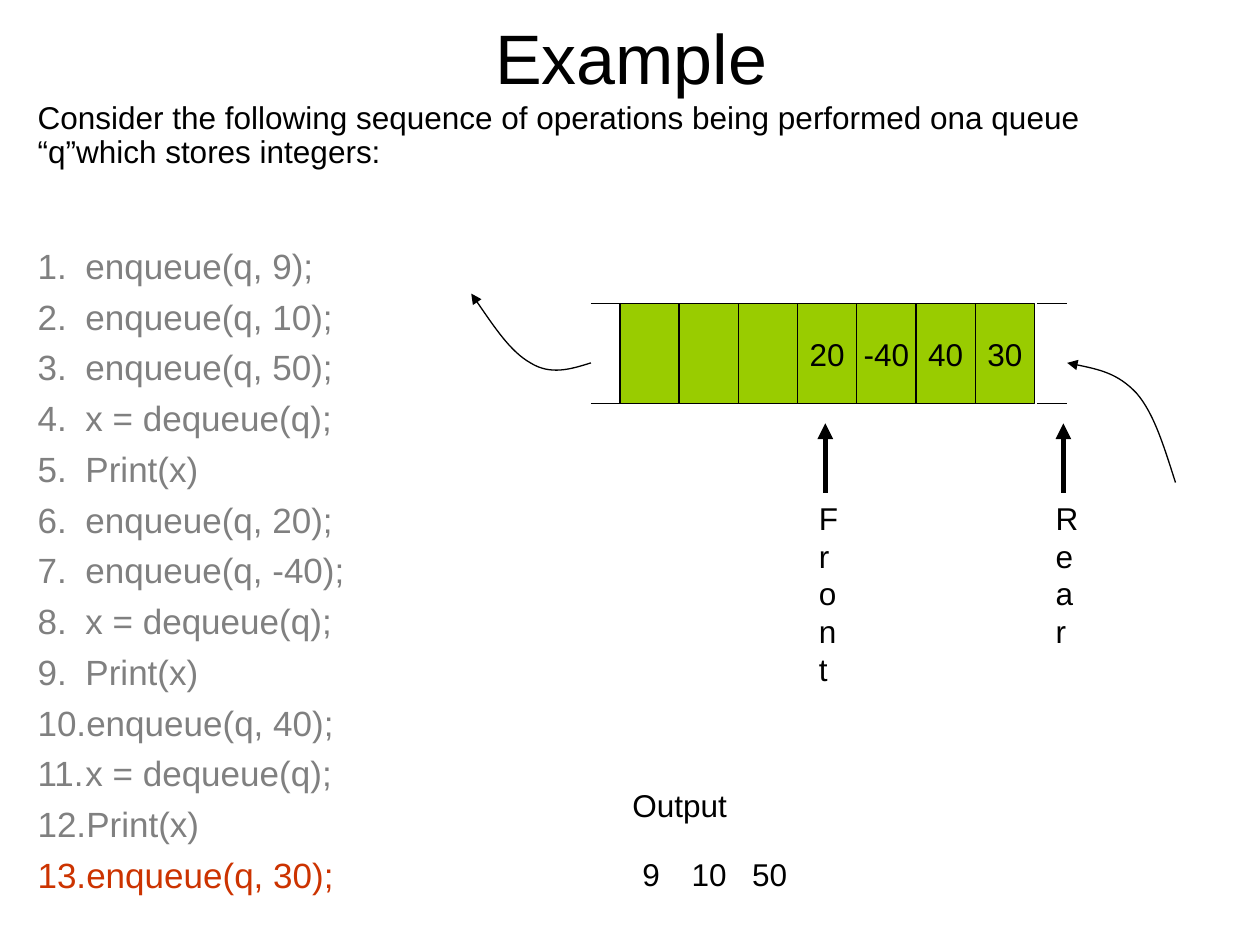
from lxml.etree import SubElement
from pptx import Presentation
from pptx.dml.color import RGBColor
from pptx.enum.shapes import MSO_CONNECTOR, MSO_SHAPE
from pptx.enum.text import MSO_ANCHOR, MSO_AUTO_SIZE, PP_ALIGN
from pptx.oxml.ns import qn
from pptx.util import Inches, Pt

COLORS = {"ink": "000000", "done": "808080", "current": "CC3300", "cell": "99CC00"}


def write(paragraph, text, size=18, color="ink"):
    run = paragraph.add_run()
    run.text = text
    run.font.name = "Arial"
    run.font.size = Pt(size)
    run.font.color.rgb = RGBColor.from_string(COLORS[color])


def draw_line(shape, width=0.75, arrow=False):
    shape.line.color.rgb = RGBColor.from_string(COLORS["ink"])
    shape.line.width = Pt(width)
    if arrow:
        SubElement(shape.line._get_or_add_ln(), qn("a:tailEnd"), type="triangle")
    if shape._element.spPr.find(qn("a:effectLst")) is None:
        SubElement(shape._element.spPr, qn("a:effectLst"))


prs = Presentation()
prs.slide_width, prs.slide_height = Inches(10), Inches(7.5)
slide = prs.slides.add_slide(prs.slide_layouts[5])
shapes = slide.shapes

title = shapes.title
title.left, title.top, title.width, title.height = map(Inches, (0.51, 0.13, 9, 0.63))
title.text_frame.vertical_anchor = MSO_ANCHOR.MIDDLE
title.text_frame.paragraphs[0].alignment = PP_ALIGN.CENTER
write(title.text_frame.paragraphs[0], "Example", 40)

operations = [
    "enqueue(q, 9);", "enqueue(q, 10);", "enqueue(q, 50);", "x = dequeue(q);",
    "Print(x)", "enqueue(q, 20);", "enqueue(q, -40);", "x = dequeue(q);",
    "Print(x)", "enqueue(q, 40);", "x = dequeue(q);", "Print(x)", "enqueue(q, 30);",
]
steps = shapes.add_textbox(Inches(0.2), Inches(1.47), Inches(2.76), Inches(5.75)).text_frame
steps.word_wrap = True
steps.margin_top = Inches(0.47)
for i, operation in enumerate(operations):
    step = steps.add_paragraph() if i else steps.paragraphs[0]
    step.space_before = Pt(5 if i else 0)
    numbering = step._p.get_or_add_pPr()
    numbering.set("marL", str(Inches(0.38)))
    numbering.set("indent", str(-Inches(0.38)))
    SubElement(numbering, qn("a:buFont"), typeface="Arial")
    SubElement(numbering, qn("a:buAutoNum"), type="arabicPeriod")
    write(step, operation, 20, "current" if i == len(operations) - 1 else "done")

labels = [
    ("Consider the following sequence of operations being performed ona queue "
     "“q”which stores integers:", 0.2, 0.76, 9.21, 0.94, True),
    ("Front", 6.4, 3.91, 0.26, 1.6, True),
    ("Rear", 8.28, 3.91, 0.26, 1.3, True),
    ("Output", 4.92, 6.19, 4.72, 0.85, True),
    ("9", 5, 6.74, 0.34, 0.4, False),
    ("10", 5.39, 6.74, 0.48, 0.4, False),
    ("50", 5.87, 6.74, 0.48, 0.4, False),
]
for text, left, top, width, height, wraps in labels:
    label = shapes.add_textbox(*map(Inches, (left, top, width, height))).text_frame
    label.word_wrap = wraps
    label.auto_size = MSO_AUTO_SIZE.SHAPE_TO_FIT_TEXT if wraps else MSO_AUTO_SIZE.NONE
    if text.startswith("Consider"):
        label.paragraphs[0].line_spacing = 0.9
    if text == "Output":
        label.paragraphs[0].space_before = Pt(9)
    write(label.paragraphs[0], text)

queue_left, queue_top, cell_width, cell_height = 4.92, 2.41, 0.47, 0.79
for rail_left in (4.69, 7.28, 8.23):
    for rail_y in (queue_top, queue_top + cell_height):
        rail = shapes.add_connector(
            MSO_CONNECTOR.STRAIGHT, Inches(rail_left), Inches(rail_y),
            Inches(rail_left + 0.24), Inches(rail_y))
        draw_line(rail)

for i, value in enumerate(["", "", "", "20", "-40", "40", "30"]):
    cell = shapes.add_shape(
        MSO_SHAPE.RECTANGLE, Inches(queue_left + i * cell_width), Inches(queue_top),
        Inches(cell_width), Inches(cell_height))
    cell.shadow.inherit = False
    cell.fill.solid()
    cell.fill.fore_color.rgb = RGBColor.from_string(COLORS["cell"])
    draw_line(cell)
    if value:
        cell.text_frame.word_wrap = False
        cell.text_frame.vertical_anchor = MSO_ANCHOR.MIDDLE
        cell.text_frame.paragraphs[0].alignment = PP_ALIGN.CENTER
        write(cell.text_frame.paragraphs[0], value)

for pointer_x in (6.55, 8.44):
    pointer = shapes.add_connector(
        MSO_CONNECTOR.STRAIGHT, Inches(pointer_x), Inches(3.91),
        Inches(pointer_x), Inches(3.36))
    draw_line(pointer, 3, arrow=True)

leaving = [(4.69, 2.88), (4.53, 2.93), (4.37, 2.98), (4.21, 2.88),
           (4.05, 2.79), (3.9, 2.56), (3.74, 2.33)]
entering = [(9.33, 3.83), (9.24, 3.55), (9.16, 3.28), (9.02, 3.12),
            (8.87, 2.96), (8.67, 2.92), (8.47, 2.88)]
for route in (leaving, entering):
    start, *rest = [(Inches(x), Inches(y)) for x, y in route]
    builder = shapes.build_freeform(*start)
    builder.add_line_segments(rest, close=False)
    curve = builder.convert_to_shape()
    curve.shadow.inherit = False
    curve.fill.background()
    draw_line(curve, arrow=True)
    outline = next(curve._element.iter(qn("a:path")))
    segments = outline.findall(qn("a:lnTo"))
    for i in range(0, len(segments), 3):
        bezier = SubElement(outline, qn("a:cubicBezTo"))
        for segment in segments[i:i + 3]:
            bezier.append(segment[0])
            outline.remove(segment)

prs.save("out.pptx")
